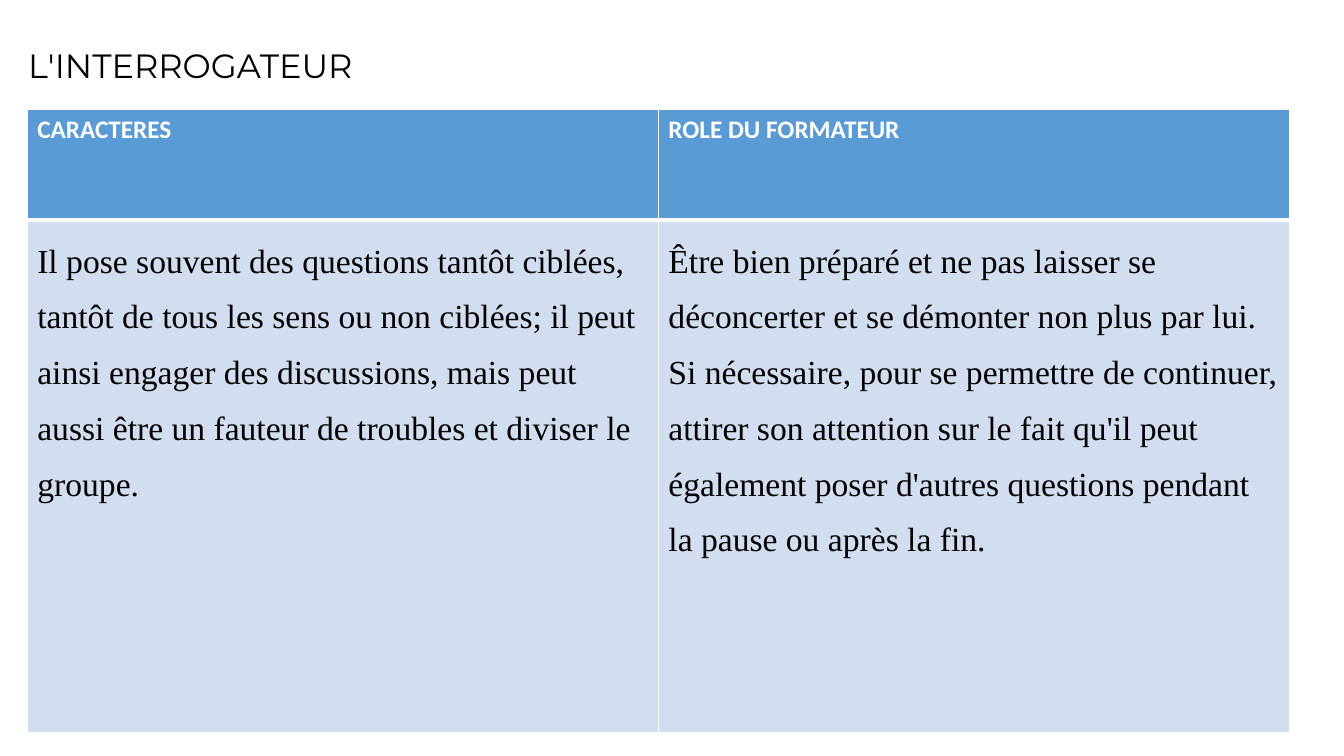
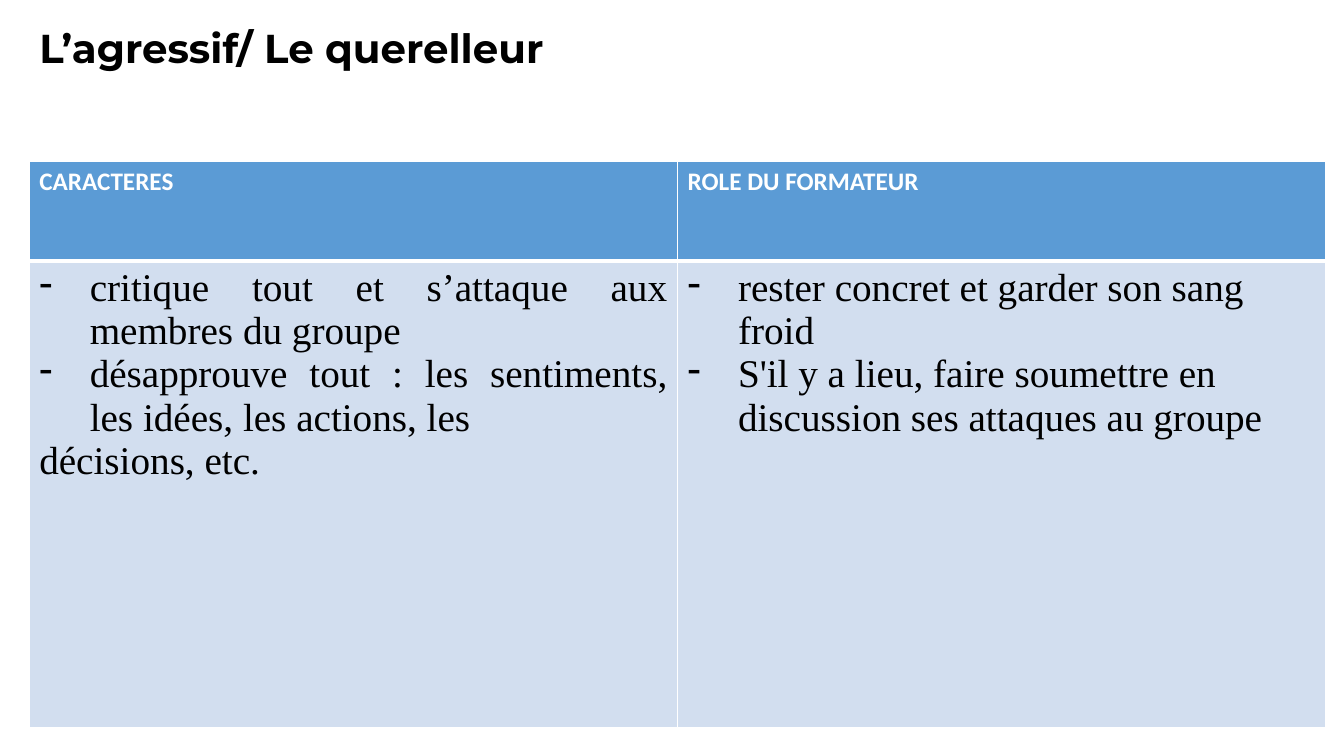
from lxml import etree
from pptx import Presentation
from pptx import util as u
from pptx.dml.color import RGBColor
from pptx.enum import text
from pptx.oxml.ns import qn

BLACK, WHITE, BLUE, PALE = "000000", "FFFFFF", "5B9BD5", "D2DEEF"
HEADERS = ["CARACTERES", "ROLE DU FORMATEUR"]
LEFT, JUSTIFY = text.PP_ALIGN.LEFT, text.PP_ALIGN.JUSTIFY

SLIDES = [
    {
        "title": "L'INTERROGATEUR",
        "title_box": (0.18, 0.4, 12.89, 0.54),
        "title_size": 24,
        "title_bold": False,
        "table_at": (0.27, 1.09),
        "column_width": 6.26,
        "row_heights": (1.09, 5.09),
        "body_size": 24,
        "line_spacing": 1.5,
        "body": [
            (LEFT, [("", "Il pose souvent des questions tantôt ciblées, tantôt de tous les sens "
                         "ou non ciblées; il peut ainsi engager des discussions, mais peut aussi "
                         "être un fauteur de troubles et diviser le groupe.")]),
            (LEFT, [("", "Être bien préparé et ne pas laisser se déconcerter et se démonter non "
                         "plus par lui. Si nécessaire, pour se permettre de continuer, attirer son "
                         "attention sur le fait qu'il peut également poser d'autres questions "
                         "pendant la pause ou après la fin.")]),
        ],
    },
    {
        "title": "L’agressif/ Le querelleur",
        "title_box": (0.29, 0.2, 11.5, 0.6),
        "title_size": 28.8,
        "title_bold": True,
        "table_at": (0.29, 1.6),
        "column_width": 6.43,
        "row_heights": (0.99, 4.63),
        "body_size": 28,
        "line_spacing": 1.0,
        "body": [
            (JUSTIFY, [("-", "critique tout et s’attaque aux membres du groupe"),
                       ("-", "désapprouve tout : les sentiments, les idées, les actions, les"),
                       ("", "décisions, etc.")]),
            (LEFT, [("-", "rester concret et garder son sang froid"),
                    ("-", "S'il y a lieu, faire soumettre en discussion ses attaques au groupe")]),
        ],
    },
]


def rgb(color):
    return RGBColor.from_string(color)


def style_font(paragraph, name, size, color, bold=False):
    for run in paragraph.runs:
        run.font.name = name
        run.font.size = u.Pt(size)
        run.font.bold = bold
        run.font.color.rgb = rgb(color)


def add_bullet(paragraph, bullet):
    properties = paragraph._p.get_or_add_pPr()
    properties.set("marL", str(u.Inches(0.5)))
    properties.set("indent", str(u.Inches(-0.5)))
    etree.SubElement(properties, qn("a:buChar")).set("char", bullet)


def style_cell(cell, color, top, bottom):
    properties = cell._tc.get_or_add_tcPr()
    for side, width in (("L", 1), ("R", 1), ("T", top), ("B", bottom)):
        border = etree.SubElement(properties, qn("a:ln" + side), w=str(u.Pt(width)))
        fill = etree.SubElement(border, qn("a:solidFill"))
        etree.SubElement(fill, qn("a:srgbClr"), val=WHITE)
    cell.fill.solid()
    cell.fill.fore_color.rgb = rgb(color)


def add_title(slide, content):
    title = slide.shapes.title
    title.left, title.top, title.width, title.height = map(u.Inches, content["title_box"])
    frame = title.text_frame
    frame.text = content["title"]
    frame.word_wrap = True
    frame.auto_size = text.MSO_AUTO_SIZE.NONE
    frame.vertical_anchor = text.MSO_ANCHOR.MIDDLE
    paragraph = frame.paragraphs[0]
    paragraph.alignment = LEFT
    paragraph.line_spacing = 0.9
    style_font(paragraph, "Montserrat", content["title_size"], BLACK, content["title_bold"])


def fill_body(cell, content, alignment, lines):
    frame = cell.text_frame
    frame.text = "\n".join(line for _, line in lines)
    for paragraph, (bullet, _) in zip(frame.paragraphs, lines):
        if bullet:
            add_bullet(paragraph, bullet)
        paragraph.alignment = alignment
        paragraph.line_spacing = content["line_spacing"]
        style_font(paragraph, "Times New Roman", content["body_size"], BLACK)


def add_comparison(slide, content):
    left, top = content["table_at"]
    width, heights = content["column_width"], content["row_heights"]
    table = slide.shapes.add_table(
        2, len(HEADERS), u.Inches(left), u.Inches(top),
        u.Inches(width * len(HEADERS)), u.Inches(sum(heights))).table
    for row, height in zip(table.rows, heights):
        row.height = u.Inches(height)
    for index, (header, (alignment, lines)) in enumerate(zip(HEADERS, content["body"])):
        table.columns[index].width = u.Inches(width)
        header_cell, body_cell = table.cell(0, index), table.cell(1, index)
        style_cell(header_cell, BLUE, 1, 3)
        style_cell(body_cell, PALE, 3, 1)
        header_cell.text_frame.text = header
        style_font(header_cell.text_frame.paragraphs[0], "Calibri", 18, WHITE, True)
        fill_body(body_cell, content, alignment, lines)


def main():
    presentation = Presentation()
    presentation.slide_width, presentation.slide_height = u.Inches(13.33), u.Inches(7.5)
    for content in SLIDES:
        slide = presentation.slides.add_slide(presentation.slide_layouts[5])
        add_title(slide, content)
        add_comparison(slide, content)
    presentation.save("out.pptx")


if __name__ == "__main__":
    main()
